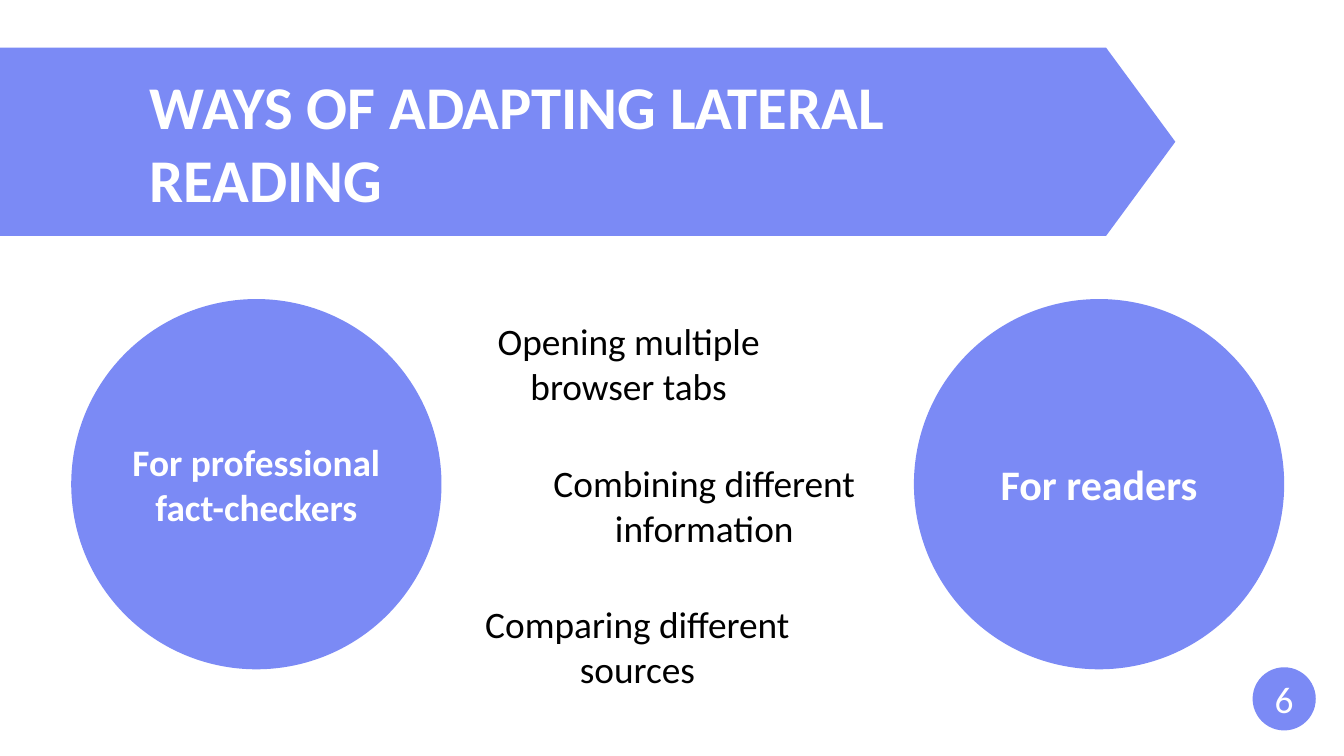
from dataclasses import dataclass

from pptx import Presentation
from pptx import util as u
from pptx.dml.color import RGBColor
from pptx.enum import shapes, text

# Content
TITLE = "WAYS OF ADAPTING LATERAL READING"
AUDIENCES = [("For professional fact-checkers", 40), ("For readers", 45)]
# Each way: wording, left edge, box width
WAYS = [
    ("Opening multiple browser tabs", 6.98, 4.75),
    ("Combining different information", 7.92, 5.12),
    ("Comparing different sources", 7.11, 4.75),
]
PAGE_NUMBER = "6"


@dataclass(frozen=True)
class Theme:
    font: str = "Calibri"
    accent: RGBColor = RGBColor(0x7B, 0x8A, 0xF5)
    light: RGBColor = RGBColor(0xFF, 0xFF, 0xFF)
    dark: RGBColor = RGBColor(0x00, 0x00, 0x00)
    title_size: int = 65
    body_size: int = 40


THEME = Theme()

# Layout, in inches
WIDTH, HEIGHT = 20, 11.25
BANNER = (0, 0.71, 17.49, 2.8)
BANNER_TIP = 1.03
CIRCLE_LEFT, CIRCLE_TOP, CIRCLE_SIZE, CIRCLE_STEP = 1.06, 4.45, 5.51, 12.54
WAY_TOP, WAY_HEIGHT, WAY_STEP = 4.69, 1.45, 2.105
BADGE = (18.64, 9.93, 0.94, 0.94)


def inches(*lengths):
    return [u.Inches(length) for length in lengths]


def write(box, wording, size, color, bold=False,
          align=text.PP_ALIGN.CENTER, anchor=text.MSO_ANCHOR.TOP):
    frame = box.text_frame
    frame.word_wrap = True
    frame.vertical_anchor = anchor
    frame.text = wording
    para = frame.paragraphs[0]
    para.alignment = align
    para.font.name = THEME.font
    para.font.size = u.Pt(size)
    para.font.bold = bold
    para.font.color.rgb = color
    return frame


def set_insets(frame, top=0):
    frame.margin_left = frame.margin_right = frame.margin_bottom = 0
    frame.margin_top = u.Inches(top)


def add_accent(page, preset, area):
    shape = page.shapes.add_shape(preset, *inches(*area))
    shape.shadow.inherit = False
    shape.fill.solid()
    shape.fill.fore_color.rgb = THEME.accent
    shape.line.fill.background()
    return shape


def add_circle(page, area, wording, size, bold):
    circle = add_accent(page, shapes.MSO_SHAPE.OVAL, area)
    set_insets(write(circle, wording, size, THEME.light, bold,
                     anchor=text.MSO_ANCHOR.MIDDLE))


def main():
    deck = Presentation()
    deck.slide_width, deck.slide_height = inches(WIDTH, HEIGHT)
    page = deck.slides.add_slide(deck.slide_layouts[5])

    # Banner with the title in front of it
    banner = add_accent(page, shapes.MSO_SHAPE.PENTAGON, BANNER)
    banner.adjustments[0] = BANNER_TIP / BANNER[3]
    title = page.shapes.title
    title.left, title.top, title.width, title.height = inches(2.23, 0.83, 11.38, 2.38)
    frame = write(title, TITLE, THEME.title_size, THEME.light, True,
                  text.PP_ALIGN.LEFT)
    frame.auto_size = text.MSO_AUTO_SIZE.NONE
    set_insets(frame, top=0.19)
    banner._element.addnext(title._element)

    # Audiences on either side
    for column, (wording, size) in enumerate(AUDIENCES):
        left = CIRCLE_LEFT + column * CIRCLE_STEP
        add_circle(page, (left, CIRCLE_TOP, CIRCLE_SIZE, CIRCLE_SIZE),
                   wording, size, True)

    # Ways between them
    for row, (wording, left, width) in enumerate(WAYS):
        top = WAY_TOP + row * WAY_STEP
        box = page.shapes.add_textbox(*inches(left, top, width, WAY_HEIGHT))
        write(box, wording, THEME.body_size, THEME.dark)

    # Page number
    add_circle(page, BADGE, PAGE_NUMBER, THEME.body_size, False)

    deck.save("out.pptx")


if __name__ == "__main__":
    main()
